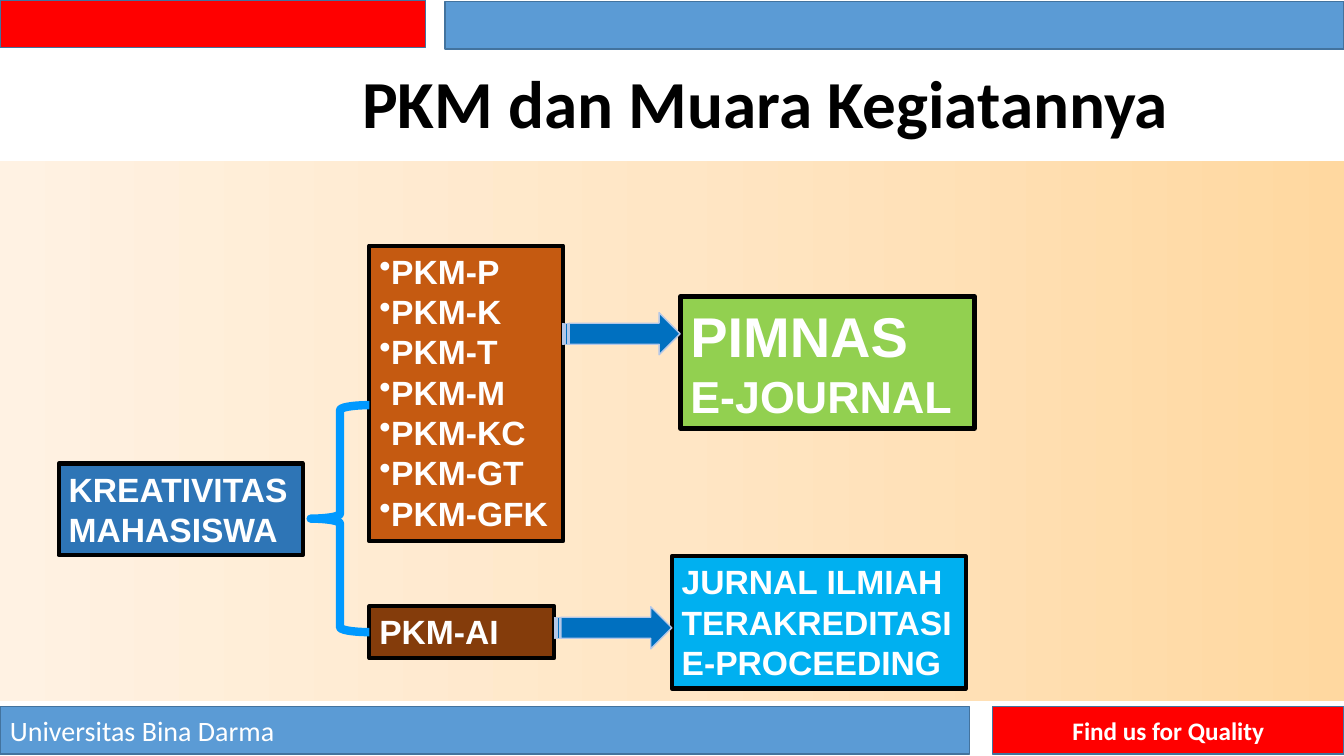
from copy import deepcopy

from lxml import etree
from pptx import Presentation
from pptx.dml.color import RGBColor
from pptx.enum.shapes import MSO_SHAPE
from pptx.enum.text import MSO_ANCHOR, PP_ALIGN
from pptx.oxml.ns import qn
from pptx.util import Cm, Pt

RECTANGLE = MSO_SHAPE.RECTANGLE
ARROW = MSO_SHAPE.STRIPED_RIGHT_ARROW
BRACE = MSO_SHAPE.LEFT_BRACE
TOP, MIDDLE = MSO_ANCHOR.TOP, MSO_ANCHOR.MIDDLE
LEFT, CENTER = PP_ALIGN.LEFT, PP_ALIGN.CENTER

# Content: places are left, top, width, height in centimetres
PAGE_WIDTH, PAGE_HEIGHT = 33.87, 19.05
BAND_PLACE = (0, 4.06, PAGE_WIDTH, 13.61)
BAND_COLOURS = ["FFF2E3", "FFE6C5", "FFD8A0"]

BAR_HEIGHT = 1.2
BARS = [  # left, top, width, fill, text, text format
    (0, 0, 10.72, "FF0000", "", {}),
    (11.22, 0.04, 22.65, "5B9BD5", "", {}),
    (0, 17.8, 24.43, "5B9BD5", "Universitas Bina Darma", {"size": 20}),
    (25.02, 17.8, 8.85, "FF0000", "Find us for Quality",
     {"size": 18, "bold": True, "align": CENTER}),
]

TITLE = "PKM dan Muara Kegiatannya"
TITLE_PLACE = (7.06, 1.45, 24.46, 2.46)

PROGRAMMES = ["PKM-P", "PKM-K", "PKM-T", "PKM-M", "PKM-KC", "PKM-GT", "PKM-GFK"]
BOXES = [  # place, fill, lines, text sizes, bullet
    ((1.48, 11.68, 6.15, 2.31), "2E75B6", ["KREATIVITAS", "MAHASISWA"], [24, 24], None),
    ((9.31, 6.19, 4.88, 7.45), "C55A11", PROGRAMMES, [24] * len(PROGRAMMES), "•"),
    ((9.31, 15.28, 4.66, 1.3), "843C0B", ["PKM-AI"], [24], None),
    ((17.15, 7.47, 7.41, 3.33), "92D050", ["PIMNAS", "E-JOURNAL"], [40, 32], None),
    ((16.93, 14.02, 7.41, 3.33), "00B0F0",
     ["JURNAL ILMIAH TERAKREDITASI", "E-PROCEEDING"], [24, 24], None),
]

ARROW_WIDTH, ARROW_HEIGHT = 2.96, 1.06
ARROW_STARTS = [(14.18, 7.88), (13.97, 15.29)]
BRACE_PLACE = (7.83, 10.21, 1.48, 5.72)


def colour(code):
    return RGBColor.from_string(code)


def add_shape(kind, place, fill=None, line=None, line_width=1):
    shape = page.shapes.add_shape(kind, *map(Cm, place))
    shape.shadow.inherit = False
    if fill:
        shape.fill.solid()
        shape.fill.fore_color.rgb = colour(fill)
    else:
        shape.fill.background()
    if line:
        shape.line.color.rgb = colour(line)
        shape.line.width = Pt(line_width)
    else:
        shape.line.fill.background()
    return shape


def write(box, lines, sizes, font="Calibri", ink="FFFFFF", bold=False,
          align=LEFT, anchor=MIDDLE, bullet=None, spacing=None):
    frame = box.text_frame
    frame.word_wrap = True
    frame.vertical_anchor = anchor
    for index, (text, size) in enumerate(zip(lines, sizes)):
        para = frame.add_paragraph() if index else frame.paragraphs[0]
        para.alignment = align
        if spacing:
            para.line_spacing = spacing
        if bullet:
            mark = etree.SubElement(para._p.get_or_add_pPr(), qn("a:buChar"))
            mark.set("char", bullet)
        span = para.add_run()
        span.text = text
        span.font.name = font
        span.font.size = Pt(size)
        span.font.bold = bold
        span.font.color.rgb = colour(ink)


deck = Presentation()
deck.slide_width, deck.slide_height = Cm(PAGE_WIDTH), Cm(PAGE_HEIGHT)
page = deck.slides.add_slide(deck.slide_layouts[6])

# Shaded band behind the diagram
band = add_shape(RECTANGLE, BAND_PLACE)
band.fill.gradient()
band.fill.gradient_angle = 0
first_stop = band.fill.gradient_stops[0]._gs
first_stop.addnext(deepcopy(first_stop))
for index, (stop, code) in enumerate(zip(band.fill.gradient_stops, BAND_COLOURS)):
    stop.position = index / (len(BAND_COLOURS) - 1)
    stop.color.rgb = colour(code)

# Header and footer bars
for left, top, width, fill, text, style in BARS:
    bar = add_shape(RECTANGLE, (left, top, width, BAR_HEIGHT), fill, "43739E")
    if text:
        style = dict(style)
        write(bar, [text], [style.pop("size")], **style)

# Title
title = page.shapes.add_textbox(*map(Cm, TITLE_PLACE))
write(title, [TITLE], [48], ink="000000", bold=True, align=CENTER, spacing=0.9)

# Diagram boxes
for place, fill, lines, sizes, bullet in BOXES:
    box = add_shape(RECTANGLE, place, fill, "000000", 3)
    write(box, lines, sizes, font="Arial", bold=True, anchor=TOP, bullet=bullet)

# Arrows and brace
for start in ARROW_STARTS:
    add_shape(ARROW, (*start, ARROW_WIDTH, ARROW_HEIGHT), "0070C0", "B4C7E7")
add_shape(BRACE, BRACE_PLACE, line="0099FF", line_width=6)

deck.save("out.pptx")
